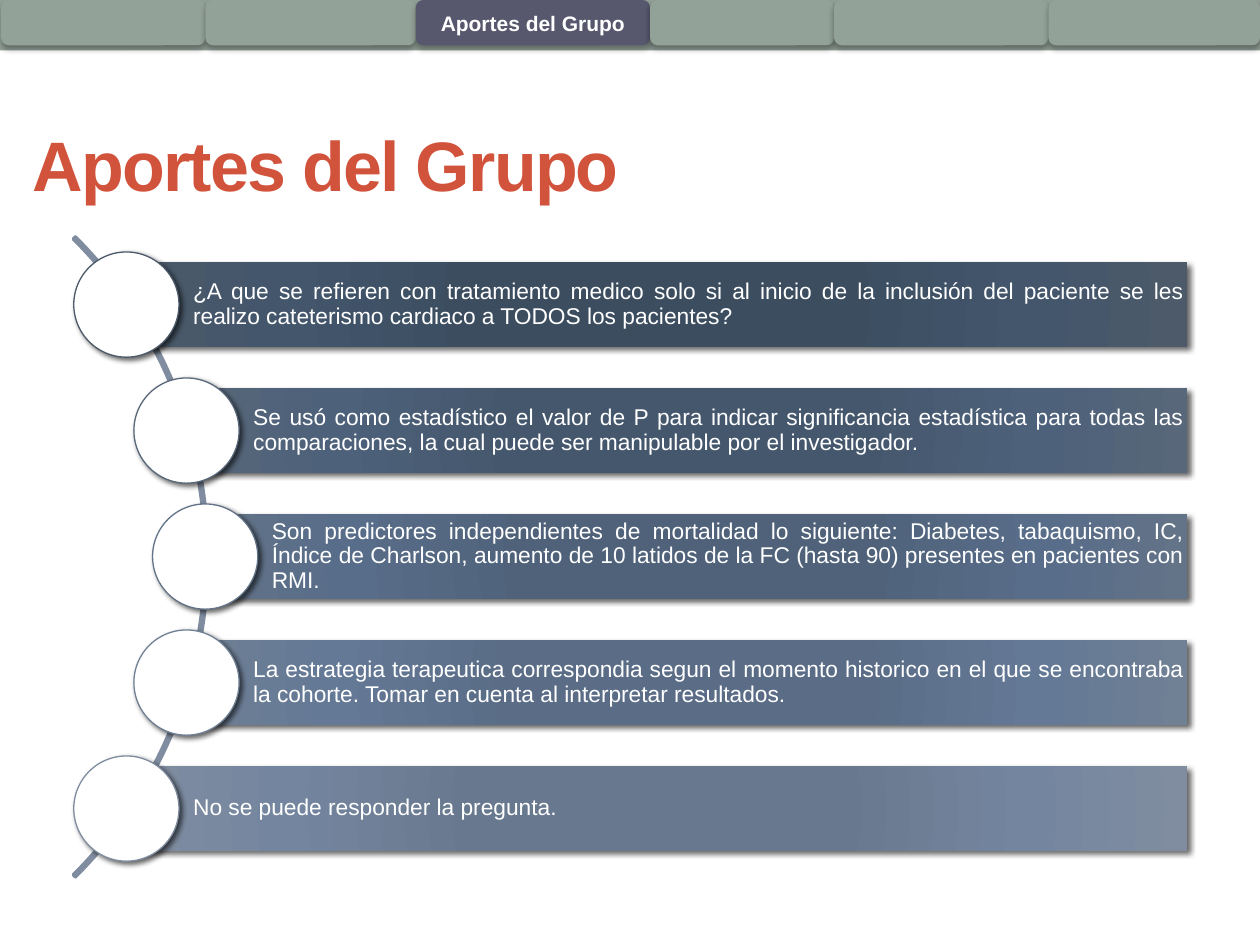
import dataclasses
import itertools

import pptx
import pptx.dml.color
import pptx.enum.shapes
import pptx.enum.text
import pptx.oxml
import pptx.oxml.ns
import pptx.util

SHAPE = pptx.enum.shapes.MSO_SHAPE
ALIGN = pptx.enum.text.PP_ALIGN
NAMESPACE = pptx.oxml.ns.nsdecls("a")
COLUMNS, ROWS = 100, 75


@dataclasses.dataclass(frozen=True)
class Theme:
    font: str = "Arial"
    title_size: float = 40
    body_size: float = 13
    tab_size: float = 12
    title: str = "D2533C"
    tab: str = "93A299"
    active_tab: str = "57576E"
    arc: str = "808DA0"
    white: str = "FFFFFF"
    tab_shadow: tuple = (32, 3.5, 2.2, 90)
    body_shadow: tuple = (60, 3, 2, 45)
    gradient_stops: tuple = (0, 34, 70, 100)
    gradients: tuple = (
        ("3B4D61", "3C4D60", "43566B", "4C5A6A"),
        ("44576F", "45576D", "4D617A", "586779"),
        ("4D627C", "4F627A", "586D89", "637388"),
        ("586C88", "5A6C86", "647996", "708095"),
        ("677790", "68788E", "74869F", "808DA0"),
    )


class SlideBuilder:
    def __init__(self, presentation, theme):
        self.theme = theme
        self.column = presentation.slide_width / COLUMNS
        self.row = presentation.slide_height / ROWS
        self.slide = presentation.slides.add_slide(presentation.slide_layouts[5])

    def box(self, left, top, width, height):
        return (round(left * self.column), round(top * self.row),
                round(width * self.column), round(height * self.row))

    def color(self, value):
        return pptx.dml.color.RGBColor.from_string(value)

    def text(self, shape, content, size, color, align, bold=False, insets=None):
        frame = shape.text_frame
        frame.word_wrap = True
        frame.auto_size = pptx.enum.text.MSO_AUTO_SIZE.NONE
        frame.vertical_anchor = pptx.enum.text.MSO_ANCHOR.MIDDLE
        if insets:
            (frame.margin_left, frame.margin_top,
             frame.margin_right, frame.margin_bottom) = map(pptx.util.Inches, insets)
        paragraph = frame.paragraphs[0]
        paragraph.alignment = align
        run = paragraph.add_run()
        run.text = content
        run.font.name = self.theme.font
        run.font.size = pptx.util.Pt(size)
        run.font.bold = bold
        run.font.color.rgb = self.color(color)
        return paragraph

    def title(self, content, *place):
        shape = self.slide.shapes.title
        shape.left, shape.top, shape.width, shape.height = self.box(*place)
        paragraph = self.text(shape, content, self.theme.title_size,
                              self.theme.title, ALIGN.LEFT, bold=True)
        paragraph.runs[0].font._element.set("spc", "-100")

    def shape(self, kind, place, fill, line=None, line_width=0.75, shadow=None):
        shape = self.slide.shapes.add_shape(kind, *self.box(*place))
        shape.shadow.inherit = False
        shape.fill.solid()
        shape.fill.fore_color.rgb = self.color(fill)
        if line:
            shape.line.color.rgb = self.color(line)
            shape.line.width = pptx.util.Pt(line_width)
        else:
            shape.line.fill.background()
        if shadow:
            self.shadow(shape, *shadow)
        return shape

    def shadow(self, shape, opacity, blur, distance, angle):
        effects = shape._element.spPr.find(pptx.oxml.ns.qn("a:effectLst"))
        effects.append(pptx.oxml.parse_xml(
            f'<a:outerShdw {NAMESPACE} blurRad="{pptx.util.Pt(blur)}" '
            f'dist="{pptx.util.Pt(distance)}" dir="{angle * 60000}" rotWithShape="0">'
            f'<a:srgbClr val="000000"><a:alpha val="{opacity * 1000}"/></a:srgbClr>'
            '</a:outerShdw>'))

    def radial_fill(self, shape, colors):
        stops = "".join(
            f'<a:gs pos="{position * 1000}"><a:srgbClr val="{color}"/></a:gs>'
            for position, color in zip(self.theme.gradient_stops, colors))
        properties = shape._element.spPr
        solid = properties.find(pptx.oxml.ns.qn("a:solidFill"))
        properties.replace(solid, pptx.oxml.parse_xml(
            f'<a:gradFill {NAMESPACE} rotWithShape="1"><a:gsLst>{stops}</a:gsLst>'
            '<a:path path="circle"><a:fillToRect l="100000" t="100000" '
            'r="100000" b="100000"/></a:path></a:gradFill>'))

    def tab(self, left, right, label):
        theme = self.theme
        shape = self.shape(SHAPE.ROUNDED_RECTANGLE, (left, 0, right - left, 3.6),
                           theme.active_tab if label else theme.tab,
                           shadow=theme.tab_shadow)
        if label:
            self.text(shape, label, theme.tab_size, theme.white, ALIGN.CENTER, bold=True)

    def arc(self, *place):
        shape = self.shape(SHAPE.BLOCK_ARC, place, self.theme.arc, self.theme.arc, 2.08)
        for index, value in enumerate((189, 27, 0.003)):
            shape.adjustments[index] = value

    def item(self, content, center_x, center_y, colors):
        theme = self.theme
        bar_right, bar_height, diameter = 94.25, 6.7, 8.35
        bar = self.shape(SHAPE.RECTANGLE,
                         (center_x, center_y - bar_height / 2,
                          bar_right - center_x, bar_height),
                         colors[0], shadow=theme.body_shadow)
        self.radial_fill(bar, colors)
        paragraph = self.text(bar, content, theme.body_size, theme.white,
                              ALIGN.JUSTIFY, insets=(0.53, 0.04, 0.04, 0.04))
        paragraph.line_spacing = 0.9
        self.shape(SHAPE.OVAL,
                   (center_x - diameter / 2, center_y - diameter / 2, diameter, diameter),
                   theme.white, colors[-1], shadow=theme.body_shadow)


def main():
    presentation = pptx.Presentation()
    presentation.slide_width = pptx.util.Inches(10)
    presentation.slide_height = pptx.util.Inches(7.5)
    theme = Theme()
    builder = SlideBuilder(presentation, theme)

    heading = "Aportes del Grupo"
    builder.shape(SHAPE.RECTANGLE, (0, 0, COLUMNS, 4), theme.tab)
    builder.title(heading, 1.6, 7.6, 90, 10.8)

    tab_edges = (0.1, 16.3, 33, 51.6, 66.2, 83.2, COLUMNS)
    active_tab = 2
    for index, (left, right) in enumerate(itertools.pairwise(tab_edges)):
        builder.tab(left, right, heading if index == active_tab else None)

    builder.arc(-55.3, 8.3, 71.8, 71.8)
    contributions = (
        "¿A que se refieren con tratamiento medico solo si al inicio de la inclusión "
        "del paciente se les realizo cateterismo cardiaco a TODOS los pacientes?",
        "Se usó como estadístico el valor de P para indicar significancia estadística "
        "para todas las comparaciones, la cual puede ser manipulable por el investigador.",
        "Son predictores independientes de mortalidad lo siguiente: Diabetes, tabaquismo, "
        "IC, Índice de Charlson, aumento de 10 latidos de la FC (hasta 90) presentes en "
        "pacientes con RMI.",
        "La estrategia terapeutica correspondia segun el momento historico en el que se "
        "encontraba la cohorte. Tomar en cuenta al interpretar resultados.",
        "No se puede responder la pregunta.",
    )
    centers = (10.03, 14.8, 16.28, 14.8, 10.03)
    first_row, row_step = 24.17, 10
    for index, (content, center) in enumerate(zip(contributions, centers)):
        builder.item(content, center, first_row + index * row_step, theme.gradients[index])

    presentation.save("out.pptx")


if __name__ == "__main__":
    main()
